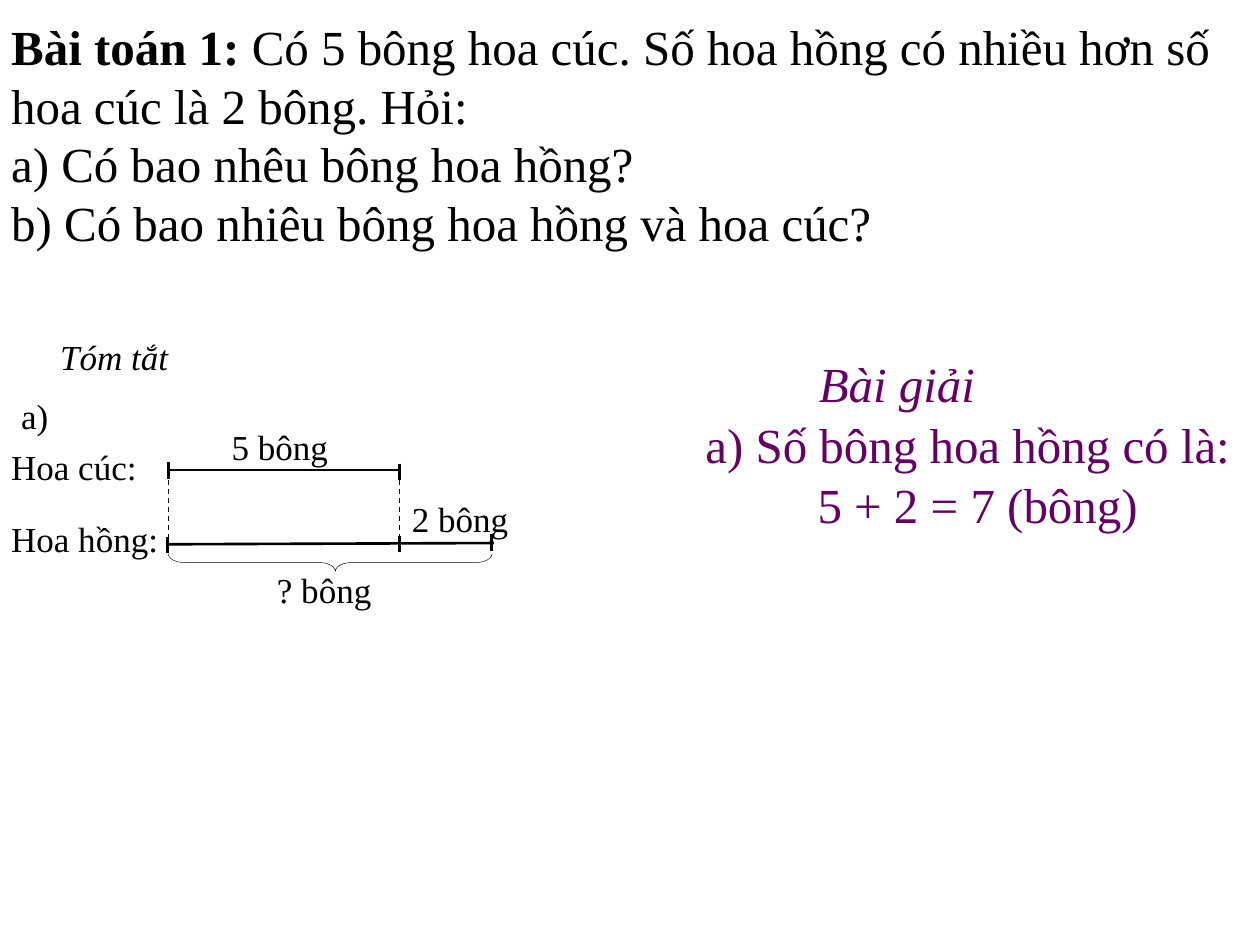
from typing import NamedTuple

from pptx import Presentation
from pptx.dml.color import RGBColor
from pptx.enum.dml import MSO_LINE_DASH_STYLE as Dash
from pptx.enum.shapes import MSO_CONNECTOR as Connector, MSO_SHAPE as Preset
from pptx.oxml.ns import qn
from pptx.slide import Slide
from pptx.util import Inches, Pt

BLACK = RGBColor(0x00, 0x00, 0x00)
PURPLE = RGBColor(0x66, 0x00, 0x66)
FONT = "Times New Roman"


class Label(NamedTuple):
    text: str
    left: float
    top: float
    width: float
    height: float = 0.44
    size: int = 20
    color: RGBColor = BLACK
    italic: bool = False
    bold_prefix: str = ""


class Segment(NamedTuple):
    x1: float
    y1: float
    x2: float
    y2: float
    weight: float = 1.5
    dashed: bool = False


def add_label(slide: Slide, label: Label) -> None:
    box = slide.shapes.add_textbox(Inches(label.left), Inches(label.top),
                                   Inches(label.width), Inches(label.height))
    frame = box.text_frame
    frame.word_wrap = True
    frame.text = label.text
    if label.bold_prefix:
        first = frame.paragraphs[0]
        body = first.text
        first.text = label.bold_prefix
        first.runs[0].font.bold = True
        first.add_run().text = body
    for paragraph in frame.paragraphs:
        for run in paragraph.runs:
            run.font.name = FONT
            run.font.size = Pt(label.size)
            run.font.color.rgb = label.color
            run.font.italic = label.italic


def add_segment(slide: Slide, segment: Segment) -> None:
    connector = slide.shapes.add_connector(
        Connector.STRAIGHT, Inches(segment.x1), Inches(segment.y1),
        Inches(segment.x2), Inches(segment.y2))
    connector.line.color.rgb = BLACK
    connector.line.width = Pt(segment.weight)
    if segment.dashed:
        connector.line.dash_style = Dash.DASH
    properties = connector._element.spPr
    properties.append(properties.makeelement(qn("a:effectLst"), {}))


def add_total_brace(slide: Slide) -> None:
    brace = slide.shapes.add_shape(Preset.RIGHT_BRACE, Inches(2.55), Inches(3.18),
                                   Inches(0.14), Inches(2.57))
    brace.rotation = 90
    brace.adjustments[0] = 0.914
    brace.adjustments[1] = 0.484
    brace.shadow.inherit = False
    brace.fill.background()
    brace.line.color.rgb = BLACK
    brace.line.width = Pt(0.25)


PROBLEM = "\n".join([
    "Có 5 bông hoa cúc. Số hoa hồng có nhiều hơn số hoa cúc là 2 bông. Hỏi:",
    "a) Có bao nhêu bông hoa hồng?",
    "b) Có bao nhiêu bông hoa hồng và hoa cúc?",
])

LABELS = [
    # Problem
    Label(PROBLEM, -0.01, 0.08, 9.95, 1.99, 28, bold_prefix="Bài toán 1: "),
    # Solution
    Label("Bài giải", 6.4, 2.76, 1.6, 0.57, 28, PURPLE, italic=True),
    Label("a) Số bông hoa hồng có là:", 5.5, 3.24, 4.44, 0.57, 28, PURPLE),
    Label("5 + 2 = 7 (bông)", 6.39, 3.72, 2.86, 0.61, 28, PURPLE),
    # Summary
    Label("Tóm tắt", 0.38, 2.61, 1.76, italic=True),
    Label("a)", 0.07, 3.08, 1.1),
    Label("Hoa cúc:", -0.01, 3.49, 1.34),
    Label("Hoa hồng:", -0.01, 4.06, 1.46),
    Label("5 bông", 1.74, 3.33, 1.1),
    Label("2 bông", 3.17, 3.9, 1.15),
    Label("? bông", 2.1, 4.46, 1.23),
]

# Bar diagram: shared start, end of the daisies, end of the roses
START, DAISY_END, ROSE_END = 1.34, 3.17, 3.9
TICK = 0.13
TICK_TOPS = [(START, 3.67), (DAISY_END, 3.68),
             (START - 0.01, 4.26), (DAISY_END, 4.25), (ROSE_END, 4.24)]

SEGMENTS = [
    *(Segment(x, 3.81, x, 4.31, 0.75, True) for x in (START, DAISY_END)),
    Segment(START, 3.73, DAISY_END, 3.73),
    Segment(START - 0.01, 4.32, ROSE_END + 0.02, 4.31),
    *(Segment(x, top, x, top + TICK) for x, top in TICK_TOPS),
]


def main() -> None:
    presentation = Presentation()
    presentation.slide_width = Inches(10)
    presentation.slide_height = Inches(7.5)
    slide = presentation.slides.add_slide(presentation.slide_layouts[6])

    for label in LABELS:
        add_label(slide, label)
    add_total_brace(slide)
    for segment in SEGMENTS:
        add_segment(slide, segment)

    presentation.save("out.pptx")


if __name__ == "__main__":
    main()
